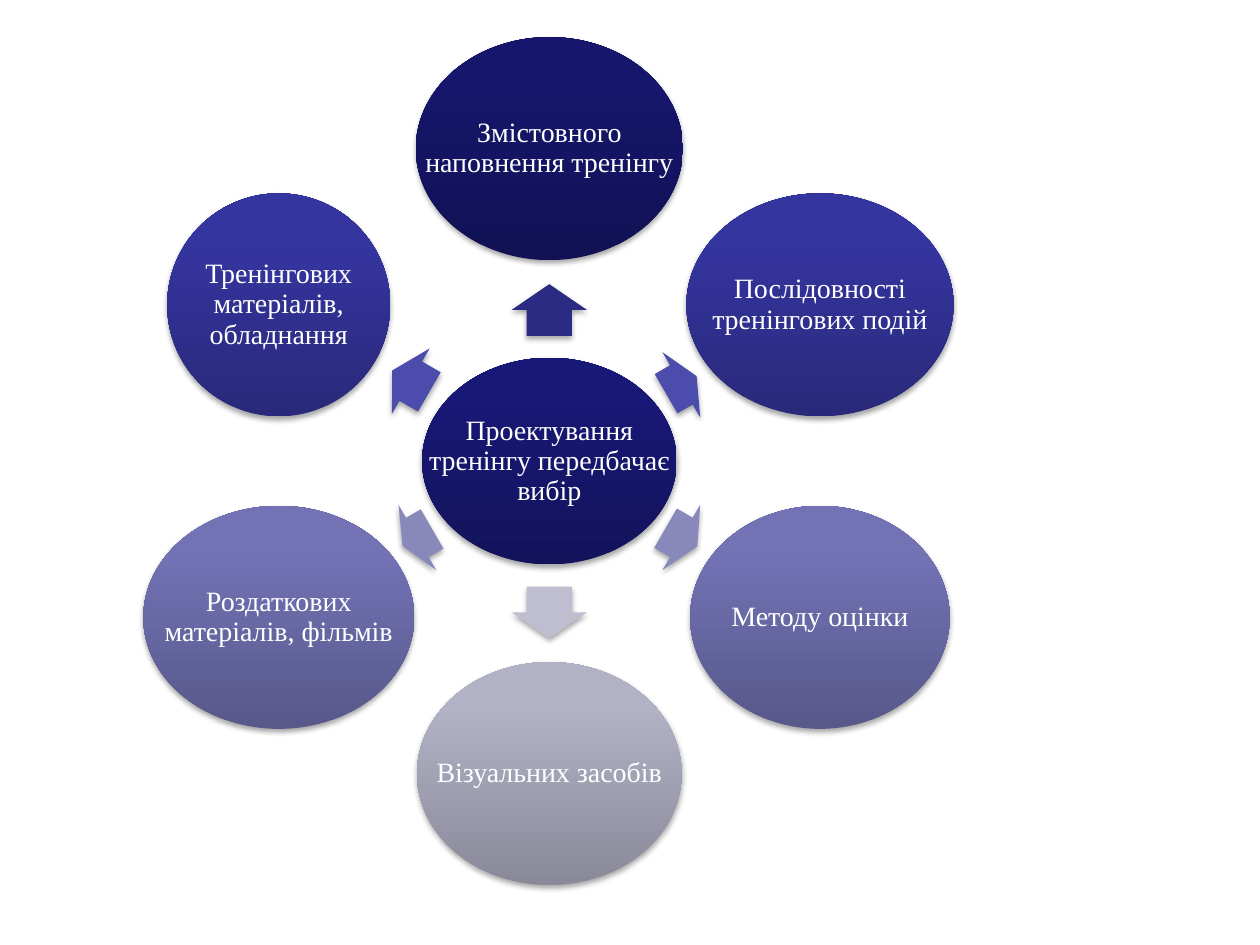
import math
from dataclasses import dataclass

import pptx
import pptx.dml.color
import pptx.enum.shapes
import pptx.enum.text
import pptx.oxml
import pptx.oxml.ns
import pptx.util
from pptx.util import Inches

SHAPE = pptx.enum.shapes.MSO_SHAPE
NS = pptx.oxml.ns.nsdecls("a")


@dataclass(frozen=True)
class Theme:
    font: str = "Times New Roman"
    size: float = 16
    text: str = "FFFFFF"
    # gradient stops from the bottom edge to the top edge
    hub: tuple = ("13135B", "181876", "161678")
    navy: tuple = ("111154", "16166D", "15156F")
    indigo: tuple = ("29297B", "3535A0", "3434A2")
    violet: tuple = ("58588B", "7272B5", "7171B7")
    silver: tuple = ("898999", "B2B2C7", "B2B2C8")
    navy_arrow: str = "2B2B84"
    indigo_arrow: str = "4C4CAD"
    violet_arrow: str = "8888BB"
    silver_arrow: str = "BEBED0"


THEME = Theme()
CENTER = (4.36, 3.66)
RING_RADIUS = 2.48
NODE_HEIGHT = 1.77
ARROW_HEIGHT = 0.6

# text, node width, gradient, arrow colour, arrow length, arrow radius;
# clockwise from the top
NODES = [
    ("Змістовного наповнення тренінгу", 2.12, THEME.navy, THEME.navy_arrow, 0.41, 1.2),
    ("Послідовності тренінгових подій", 2.12, THEME.indigo, THEME.indigo_arrow, 0.28, 1.21),
    ("Методу оцінки", 2.06, THEME.violet, THEME.violet_arrow, 0.29, 1.21),
    ("Візуальних засобів", 2.1, THEME.silver, THEME.silver_arrow, 0.41, 1.2),
    ("Роздаткових матеріалів, фільмів", 2.15, THEME.violet, THEME.violet_arrow, 0.27, 1.21),
    ("Тренінгових матеріалів, обладнання", 1.77, THEME.indigo, THEME.indigo_arrow, 0.34, 1.27),
]


def set_attrs(obj, values):
    for name, value in values.items():
        setattr(obj, name, value)


def polar(radius, angle):
    """Point at a clockwise angle in degrees from the right of the hub."""
    a = math.radians(angle)
    return CENTER[0] + radius * math.cos(a), CENTER[1] + radius * math.sin(a)


def box(center, width, height):
    x, y = center
    return [Inches(v) for v in (x - width / 2, y - height / 2, width, height)]


def add_shadow(sp):
    sp.shadow.inherit = False
    effects = sp._element.spPr.find(pptx.oxml.ns.qn("a:effectLst"))
    effects.append(pptx.oxml.parse_xml(
        f'<a:outerShdw {NS} blurRad="40000" dist="23000" dir="5400000" rotWithShape="0">'
        '<a:srgbClr val="000000"><a:alpha val="35000"/></a:srgbClr></a:outerShdw>'))


def fill_gradient(sp, colors):
    sp.fill.gradient()
    sp.fill.gradient_angle = 90
    stops = sp._element.spPr.find(".//" + pptx.oxml.ns.qn("a:gsLst"))
    for stop in list(stops):
        stops.remove(stop)
    for pos, color in zip((0, 80, 100), colors):
        stops.append(pptx.oxml.parse_xml(
            f'<a:gs {NS} pos="{pos * 1000}"><a:srgbClr val="{color}"/></a:gs>'))


def add_label(shapes, bounds, text):
    tf = shapes.add_textbox(*bounds).text_frame
    set_attrs(tf, {"word_wrap": True,
                   "vertical_anchor": pptx.enum.text.MSO_ANCHOR.MIDDLE})
    set_attrs(tf, {f"margin_{side}": Inches(0.02)
                   for side in ("left", "right", "top", "bottom")})
    p = tf.paragraphs[0]
    set_attrs(p, {"alignment": pptx.enum.text.PP_ALIGN.CENTER,
                  "line_spacing": 0.9, "space_after": pptx.util.Pt(5.6)})
    r = p.add_run()
    r.text = text
    set_attrs(r.font, {"name": THEME.font, "size": pptx.util.Pt(THEME.size)})
    r.font.color.rgb = pptx.dml.color.RGBColor.from_string(THEME.text)


def add_node(shapes, center, width, height, colors, text):
    """Shaded ellipse with a label that may use its full width."""
    bounds = box(center, width, height)
    sp = shapes.add_shape(SHAPE.OVAL, *bounds)
    fill_gradient(sp, colors)
    sp.line.fill.background()
    add_shadow(sp)
    add_label(shapes, bounds, text)


def add_arrow(shapes, center, length, angle, color):
    sp = shapes.add_shape(SHAPE.RIGHT_ARROW, *box(center, length, ARROW_HEIGHT))
    sp.rotation = angle % 360
    sp.adjustments[0], sp.adjustments[1] = 0.6, 0.5
    sp.fill.solid()
    sp.fill.fore_color.rgb = pptx.dml.color.RGBColor.from_string(color)
    sp.line.fill.background()
    add_shadow(sp)


def main():
    prs = pptx.Presentation()
    set_attrs(prs, {"slide_width": Inches(10), "slide_height": Inches(7.5)})
    s = prs.slides.add_slide(prs.slide_layouts[6])
    shapes = s.shapes.add_group_shape().shapes

    add_node(shapes, CENTER, 2.02, 1.64, THEME.hub,
             "Проектування тренінгу передбачає вибір")
    for i, (text, width, colors, arrow, length, radius) in enumerate(NODES):
        angle = -90 + i * 360 / len(NODES)
        add_arrow(shapes, polar(radius, angle), length, angle, arrow)
        add_node(shapes, polar(RING_RADIUS, angle), width, NODE_HEIGHT, colors, text)

    prs.save("out.pptx")


if __name__ == "__main__":
    main()
